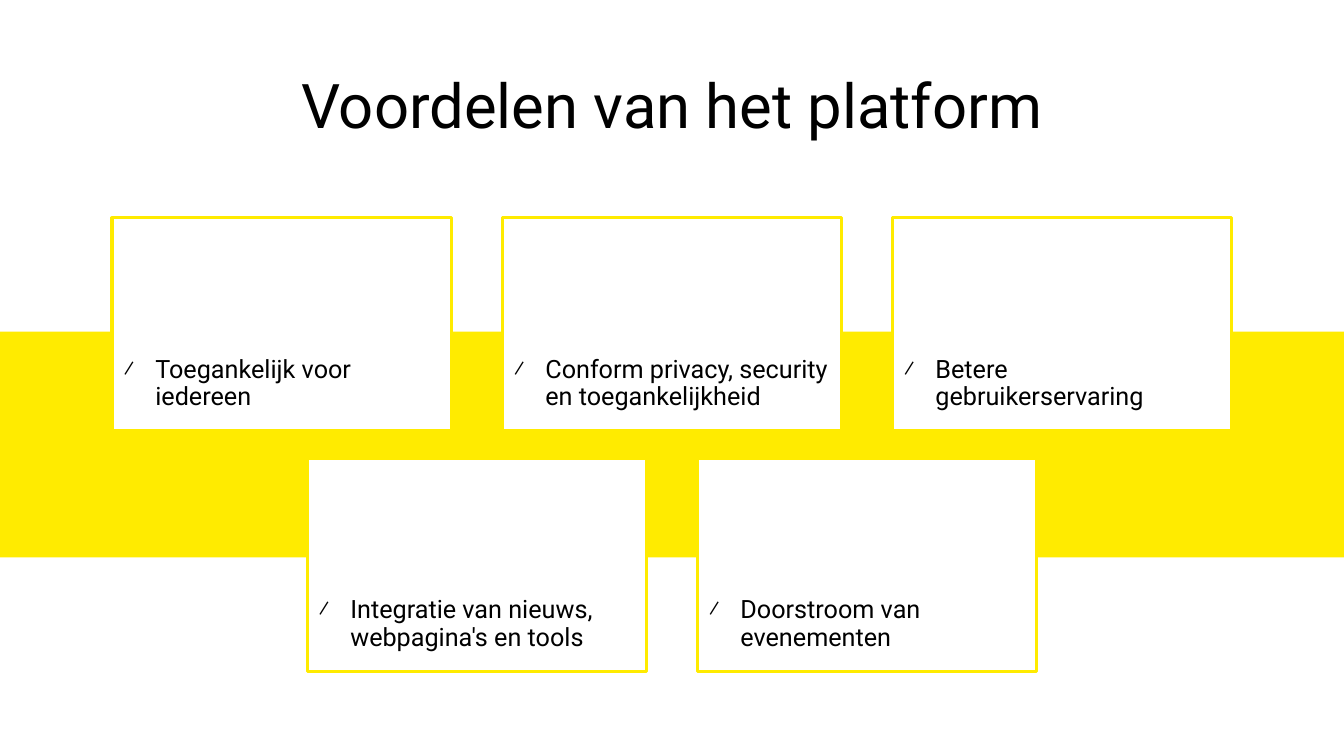
from lxml import etree
from pptx import Presentation
from pptx import util as u
from pptx.dml.color import RGBColor
from pptx.enum import shapes, text
from pptx.oxml.ns import qn

WIDE, HIGH = 33.87, 19.05
FONT = "Roboto"
HUES = {"band": "FFEB00", "card": "FFFFFF", "ink": "000000"}
CARD_W, CARD_H, STEP = 8.56, 5.36, 9.83
INDENT = u.Cm(0.79)
ROWS = [
    (5.49, ["Toegankelijk voor iedereen",
            "Conform privacy, security en toegankelijkheid",
            "Betere gebruikerservaring"]),
    (11.56, ["Integratie van nieuws, webpagina's en tools",
             "Doorstroom van evenementen"]),
]
TITLE = {
    "frame": {"margin_left": 0, "margin_right": 0, "margin_top": 0,
              "margin_bottom": 0, "word_wrap": True,
              "vertical_anchor": text.MSO_ANCHOR.MIDDLE},
    "para": {"alignment": text.PP_ALIGN.CENTER, "line_spacing": u.Pt(38)},
    "size": 44,
}
CARD = {
    "frame": {"margin_left": u.Cm(0.3), "margin_right": u.Cm(0.3),
              "margin_top": 0, "margin_bottom": u.Cm(0.5), "word_wrap": True,
              "vertical_anchor": text.MSO_ANCHOR.BOTTOM},
    "para": {"alignment": text.PP_ALIGN.LEFT, "line_spacing": 0.9},
    "size": 18,
}


def hue(name):
    return RGBColor.from_string(HUES[name])


def apply(item, form):
    for name, value in form.items():
        setattr(item, name, value)


def add_rect(slide, box, fill, line=None):
    rect = slide.shapes.add_shape(shapes.MSO_SHAPE.RECTANGLE, *map(u.Cm, box))
    rect.shadow.inherit = False
    rect.fill.solid()
    rect.fill.fore_color.rgb = hue(fill)
    if line:
        rect.line.color.rgb = hue(line)
        rect.line.width = u.Pt(2.25)
    else:
        rect.line.fill.background()
    return rect


def add_slash(para):
    """Give the paragraph a slash bullet with a hanging indent."""
    props = para._p.get_or_add_pPr()
    props.set("marL", str(INDENT))
    props.set("indent", str(-INDENT))
    for tag, key, value in [("a:buSzPct", "val", "90000"),
                            ("a:buFont", "typeface", FONT),
                            ("a:buChar", "char", "⁄")]:
        etree.SubElement(props, qn(tag)).set(key, value)


def write(shape, words, form, slash=False):
    frame = shape.text_frame
    apply(frame, form["frame"])
    para = frame.paragraphs[0]
    para.text = words
    apply(para, form["para"])
    if slash:
        add_slash(para)
    apply(para.font, {"name": FONT, "size": u.Pt(form["size"])})
    para.font.color.rgb = hue("ink")


def add_title(slide, words):
    box = slide.shapes.add_textbox(*map(u.Cm, (1.04, 1.19, 31.8, 3.38)))
    write(box, words, TITLE)


def add_row(slide, top, labels):
    """Draw a row of cards, centred on the slide."""
    left = (WIDE - STEP * (len(labels) - 1) - CARD_W) / 2
    for i, label in enumerate(labels):
        card = add_rect(slide, (left + i * STEP, top, CARD_W, CARD_H),
                        "card", "band")
        write(card, label, CARD, slash=True)


def main():
    deck = Presentation()
    apply(deck, {"slide_width": u.Cm(WIDE), "slide_height": u.Cm(HIGH)})
    slide = deck.slides.add_slide(deck.slide_layouts[6])
    add_rect(slide, (0, 8.36, WIDE, 5.69), "band")
    add_title(slide, "Voordelen van het platform")
    for top, labels in ROWS:
        add_row(slide, top, labels)
    deck.save("out.pptx")


if __name__ == "__main__":
    main()
